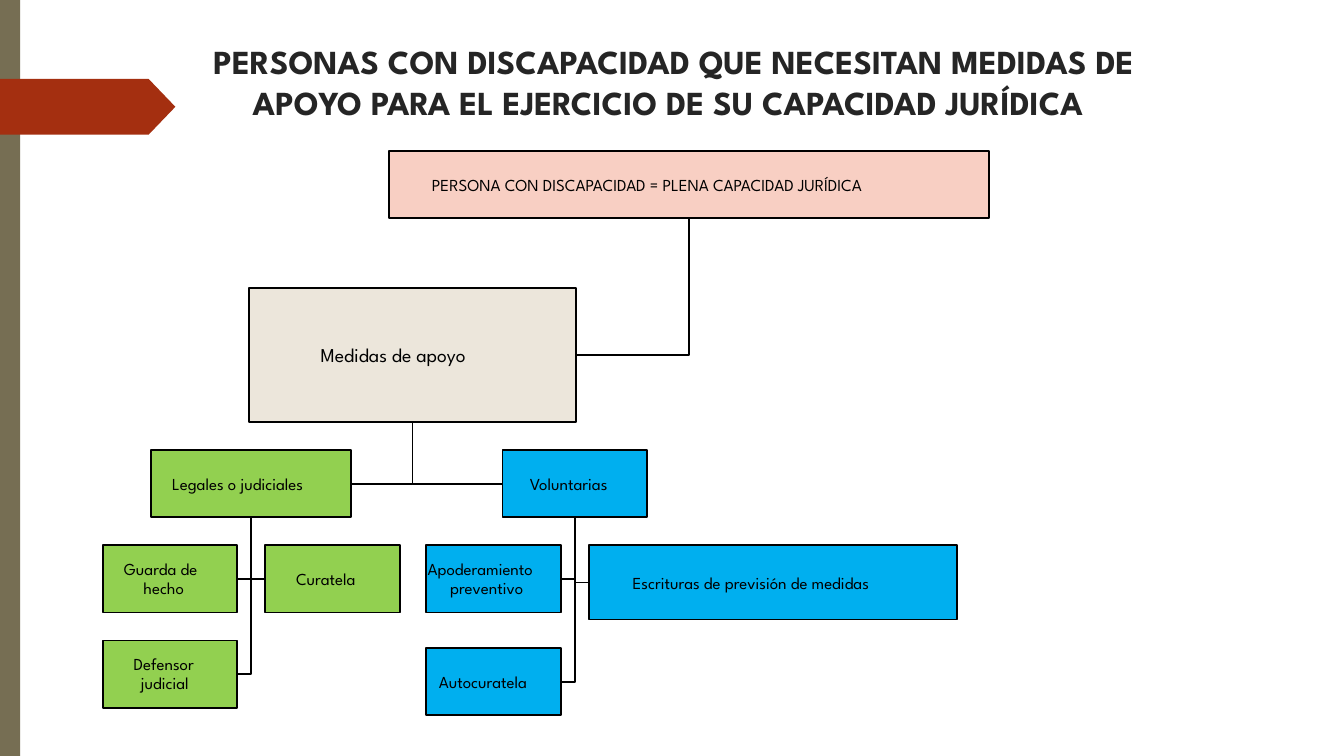
from dataclasses import dataclass

from pptx import Presentation
from pptx import util as u
from pptx.dml import color
from pptx.enum import shapes, text


@dataclass(frozen=True)
class Theme:
    font: str = "League Spartan"
    title: str = "252525"
    ink: str = "000000"
    stripe: str = "766E53"
    arrow: str = "A42F10"
    person: str = "F8CFC3"
    support: str = "ECE6DB"
    legal: str = "92D050"
    voluntary: str = "00AFEF"
    title_size: float = 24
    large_size: float = 14
    body_size: float = 12
    line_width: float = 1.25


class Diagram:
    def __init__(self, slide, theme):
        self.slide = slide
        self.theme = theme

    def shape(self, kind, x, y, w, h, fill):
        sp = self.slide.shapes.add_shape(kind, u.Pt(x), u.Pt(y), u.Pt(w), u.Pt(h))
        sp.shadow.inherit = False
        sp.fill.solid()
        sp.fill.fore_color.rgb = color.RGBColor.from_string(fill)
        sp.line.fill.background()
        return sp

    def outline(self, sp):
        sp.line.color.rgb = color.RGBColor.from_string(self.theme.ink)
        sp.line.width = u.Pt(self.theme.line_width)

    def label(self, sp, words, size, ink, first, rest, right=0, top=0,
              anchor=text.MSO_ANCHOR.MIDDLE, bold=False, spacing=None):
        tf = sp.text_frame
        tf.word_wrap = True
        tf.vertical_anchor = anchor
        tf.margin_left = tf.margin_bottom = 0
        tf.margin_top, tf.margin_right = u.Pt(top), u.Pt(right)
        tf.text = words
        p = tf.paragraphs[0]
        p.alignment = text.PP_ALIGN.LEFT
        if spacing:
            p.line_spacing = u.Pt(spacing)
        pPr = p._p.get_or_add_pPr()
        pPr.set("marL", str(u.Pt(rest)))
        pPr.set("indent", str(u.Pt(first - rest)))
        for r in p.runs:
            r.font.name = self.theme.font
            r.font.size = u.Pt(size)
            r.font.bold = bold
            r.font.color.rgb = color.RGBColor.from_string(ink)

    def title(self, words, x, y, w, h):
        sp = self.slide.shapes.add_textbox(u.Pt(x), u.Pt(y), u.Pt(w), u.Pt(h))
        self.label(sp, words, self.theme.title_size, self.theme.title, 28, 56,
                   right=60, top=13, anchor=text.MSO_ANCHOR.TOP, bold=True)

    def box(self, words, x, y, w, h, fill, first, rest=None, size=None):
        sp = self.shape(shapes.MSO_SHAPE.RECTANGLE, x, y, w, h, fill)
        self.outline(sp)
        wraps = rest is not None
        self.label(sp, words, size or self.theme.body_size, self.theme.ink,
                   first, rest if wraps else first, right=18 if wraps else 0,
                   spacing=13.3 if wraps else None)
        return sp

    def link(self, parent, *children):
        trunk = parent.left + parent.width // 2
        bottom = parent.top + parent.height
        elbows = self.slide.shapes.build_freeform(trunk, bottom)
        for i, child in enumerate(children):
            middle = child.top + child.height // 2
            side = child.left if child.left > trunk else child.left + child.width
            if i:
                elbows.move_to(trunk, bottom)
            elbows.add_line_segments([(trunk, middle), (side, middle)], close=False)
        sp = elbows.convert_to_shape()
        sp.shadow.inherit = False
        sp.fill.background()
        self.outline(sp)


def main():
    prs = Presentation()
    prs.slide_width, prs.slide_height = u.Pt(960), u.Pt(540)
    t = Theme()
    d = Diagram(prs.slides.add_slide(prs.slide_layouts[6]), t)

    d.shape(shapes.MSO_SHAPE.RECTANGLE, 0, 0, 14.4, 540, t.stripe)
    arrow = d.shape(shapes.MSO_SHAPE.PENTAGON, 0, 56.4, 125.3, 39.8, t.arrow)
    arrow.adjustments[0] = 0.48
    d.title("PERSONAS CON DISCAPACIDAD QUE NECESITAN MEDIDAS DE "
            "APOYO PARA EL EJERCICIO DE SU CAPACIDAD JURÍDICA",
            124.5, 16.5, 753, 79.5)

    person = d.box("PERSONA CON DISCAPACIDAD = PLENA CAPACIDAD JURÍDICA",
                   278, 108, 428.5, 48, t.person, 30.5)
    support = d.box("Medidas de apoyo", 178, 205.5, 233.5, 96, t.support, 51,
                    size=t.large_size)

    kinds_y, row_y, h, w = 321.5, 389.5, 48, 96
    legal_x, voluntary_x = 73.5, 304.5
    legal = d.box("Legales o judiciales", 108, kinds_y, 142.5, h, t.legal, 15)
    voluntary = d.box("Voluntarias", 359, kinds_y, 103, h, t.voluntary, 19.5)

    guard = d.box("Guarda de hecho", legal_x, row_y, w, h, t.legal, 15, 29)
    curator = d.box("Curatela", 189.5, row_y, w, h, t.legal, 22)
    defender = d.box("Defensor judicial", legal_x, 457.5, w, h, t.legal, 22, 27)

    proxy = d.box("Apoderamiento preventivo", voluntary_x, row_y, w, h,
                  t.voluntary, 1, 17)
    deeds = d.box("Escrituras de previsión de medidas", 420.5, row_y, 263, 53,
                  t.voluntary, 31.5)
    self_curator = d.box("Autocuratela", voluntary_x, 463, w, h, t.voluntary, 9)

    d.link(person, support)
    d.link(support, legal, voluntary)
    d.link(legal, guard, curator, defender)
    d.link(voluntary, proxy, deeds, self_curator)
    prs.save("out.pptx")


if __name__ == "__main__":
    main()
